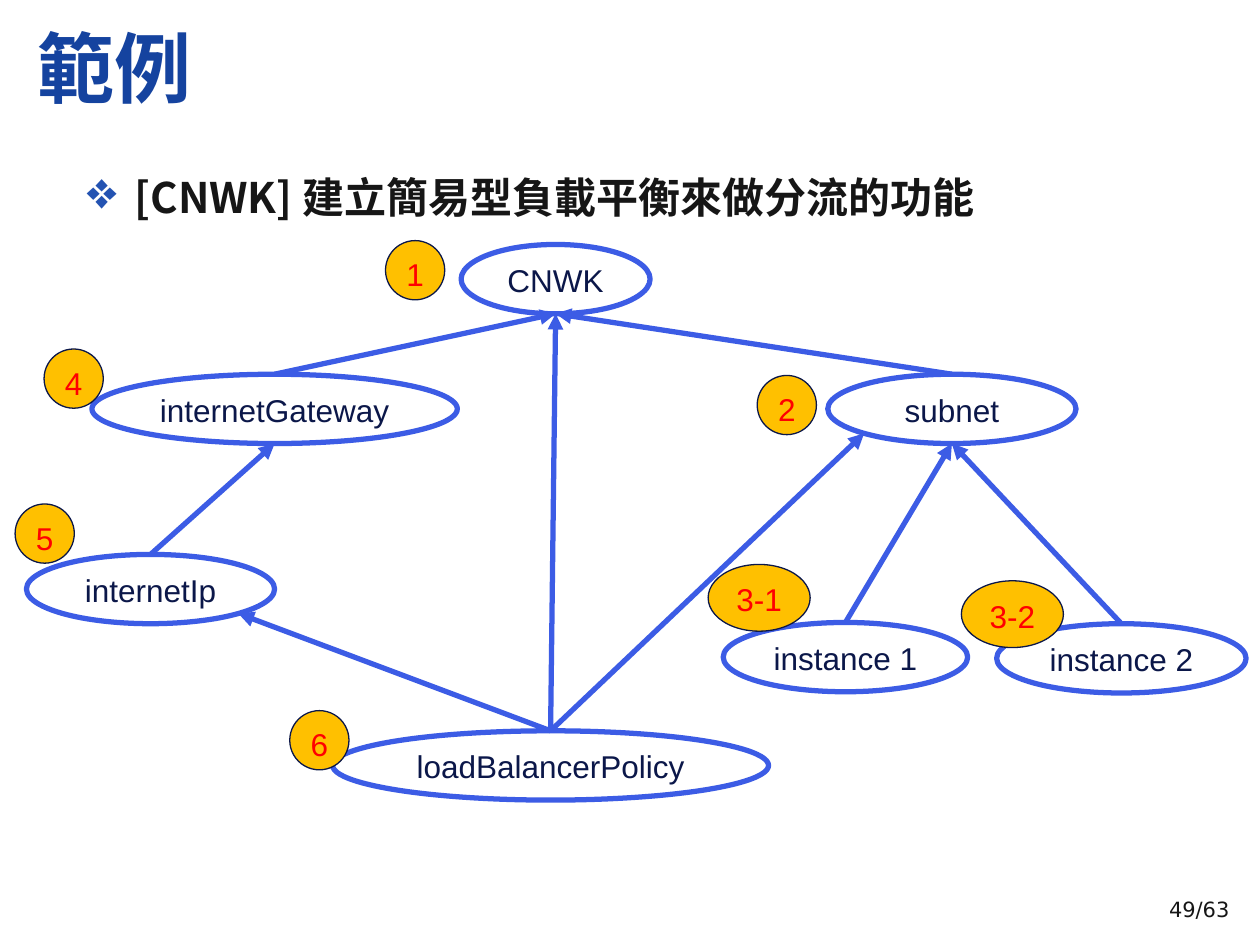
from math import sqrt

from lxml.etree import SubElement
from pptx import Presentation
from pptx.dml.color import RGBColor
from pptx.enum.shapes import MSO_CONNECTOR, MSO_SHAPE
from pptx.enum.text import MSO_ANCHOR, MSO_AUTO_SIZE, PP_ALIGN
from pptx.oxml.ns import qn
from pptx.util import Inches, Pt

BLUE, NAVY, BLACK = "3C5CE5", "0B1749", "161616"
TITLE_BLUE, BULLET_BLUE = "15439F", "2453B2"
AMBER, RED = "FFC000", "FF0000"
LATIN_FONT, CHINESE_FONT, NUMBER_FONT = "Arial", "Noto Sans CJK SC", "DejaVu Sans"

DIAGONAL = sqrt(0.5) / 2
BOTTOM_LEFT, BOTTOM, BOTTOM_RIGHT = 3, 4, 5
ELLIPSE_SITES = {
    BOTTOM_LEFT: (0.5 - DIAGONAL, 0.5 + DIAGONAL),
    BOTTOM: (0.5, 1),
    BOTTOM_RIGHT: (0.5 + DIAGONAL, 0.5 + DIAGONAL),
}


def color(value):
    return RGBColor.from_string(value)


class SlideBuilder:
    def __init__(self, deck):
        self.slide = deck.slides.add_slide(deck.slide_layouts[5])
        self.shapes = self.slide.shapes

    def style(self, para, text, size, font_name, font_color, bold=False, align=PP_ALIGN.LEFT):
        para.text = text
        para.alignment = align
        font = para.font
        font.size, font.name, font.bold = Pt(size), font_name, bold
        font.color.rgb = color(font_color)
        defaults = para._p.pPr.find(qn("a:defRPr"))
        SubElement(defaults, qn("a:ea")).set("typeface", font_name)

    def title(self, text, left, top, width, height):
        box = self.shapes.title
        box.left, box.top = Inches(left), Inches(top)
        box.width, box.height = Inches(width), Inches(height)
        frame = box.text_frame
        frame.auto_size = MSO_AUTO_SIZE.NONE
        frame.vertical_anchor = MSO_ANCHOR.MIDDLE
        para = frame.paragraphs[0]
        self.style(para, text, 44, CHINESE_FONT, TITLE_BLUE, bold=True)
        para.line_spacing = 0.95

    def text_box(self, left, top, width, height):
        box = self.shapes.add_textbox(Inches(left), Inches(top), Inches(width), Inches(height))
        box.text_frame.word_wrap = True
        return box.text_frame.paragraphs[0]

    def bullet(self, text, left, top, width, height):
        para = self.text_box(left, top, width, height)
        properties = para._p.get_or_add_pPr()
        properties.set("marL", str(Inches(0.38)))
        properties.set("indent", str(-Inches(0.38)))
        bullet_color = SubElement(properties, qn("a:buClr"))
        SubElement(bullet_color, qn("a:srgbClr")).set("val", BULLET_BLUE)
        SubElement(properties, qn("a:buSzPct")).set("val", "125000")
        SubElement(properties, qn("a:buChar")).set("char", "❖")
        self.style(para, text, 24, CHINESE_FONT, BLACK, bold=True)

    def page_number(self, text, left, top, width, height):
        para = self.text_box(left, top, width, height)
        self.style(para, text, 12, NUMBER_FONT, BLACK)

    def ellipse(self, text, left, top, width, height, line_color, line_width, font_color):
        shape = self.shapes.add_shape(
            MSO_SHAPE.OVAL, Inches(left), Inches(top), Inches(width), Inches(height)
        )
        shape.shadow.inherit = False
        shape.line.color.rgb = color(line_color)
        shape.line.width = Pt(line_width)
        frame = shape.text_frame
        frame.word_wrap = False
        frame.vertical_anchor = MSO_ANCHOR.TOP
        self.style(frame.paragraphs[0], text, 18, LATIN_FONT, font_color, align=PP_ALIGN.CENTER)
        return shape

    def node(self, text, left, top, width):
        shape = self.ellipse(text, left, top, width, 0.55, BLUE, 3, NAVY)
        shape.fill.background()
        return shape

    def badge(self, text, left, top, width=0.47, height=0.47):
        shape = self.ellipse(text, left, top, width, height, NAVY, 0.75, RED)
        shape.fill.solid()
        shape.fill.fore_color.rgb = color(AMBER)

    def arrow(self, source, target, site=BOTTOM):
        across, down = ELLIPSE_SITES[site]
        end_x = target.left + int(target.width * across)
        end_y = target.top + int(target.height * down)
        connector = self.shapes.add_connector(
            MSO_CONNECTOR.STRAIGHT, source.left, source.top, end_x, end_y
        )
        connector.begin_connect(source, 0)
        joint = SubElement(connector._element.nvCxnSpPr.cNvCxnSpPr, qn("a:endCxn"))
        joint.set("id", str(target.shape_id))
        joint.set("idx", str(site))
        connector.line.color.rgb = color(BLUE)
        connector.line.width = Pt(3)
        SubElement(connector.line._get_or_add_ln(), qn("a:tailEnd")).set("type", "triangle")
        SubElement(connector._element.spPr, qn("a:effectLst"))


def main():
    deck = Presentation()
    deck.slide_width, deck.slide_height = Inches(10), Inches(7.5)
    page = SlideBuilder(deck)
    page.page_number("49/63", 9.18, 7.07, 0.86, 0.3)
    page.title("範例", 0.2, 0.13, 7.48, 0.87)

    network = page.node("CNWK", 3.66, 1.94, 1.5)
    internet_ip = page.node("internetIp", 0.21, 4.4, 1.97)
    gateway = page.node("internetGateway", 0.73, 2.97, 2.9)
    subnet = page.node("subnet", 6.57, 2.97, 1.97)
    first_instance = page.node("instance 1", 5.74, 4.94, 1.94)
    second_instance = page.node("instance 2", 7.91, 4.95, 1.98)
    policy = page.node("loadBalancerPolicy", 2.64, 5.8, 3.46)

    for source, target in (
        (gateway, network),
        (internet_ip, gateway),
        (subnet, network),
        (first_instance, subnet),
        (second_instance, subnet),
        (policy, network),
    ):
        page.arrow(source, target)
    page.arrow(policy, subnet, BOTTOM_LEFT)
    page.arrow(policy, internet_ip, BOTTOM_RIGHT)

    page.bullet("[CNWK] 建立簡易型負載平衡來做分流的功能", 0.59, 1.31, 8.11, 0.57)

    for text, left, top in (
        ("1", 3.06, 1.91),
        ("2", 6.01, 2.98),
        ("4", 0.35, 2.77),
        ("5", 0.12, 4),
        ("6", 2.3, 5.64),
    ):
        page.badge(text, left, top)
    for text, left, top in (("3-1", 5.62, 4.48), ("3-2", 7.63, 4.61)):
        page.badge(text, left, top, 0.81, 0.53)

    deck.save("out.pptx")


if __name__ == "__main__":
    main()
